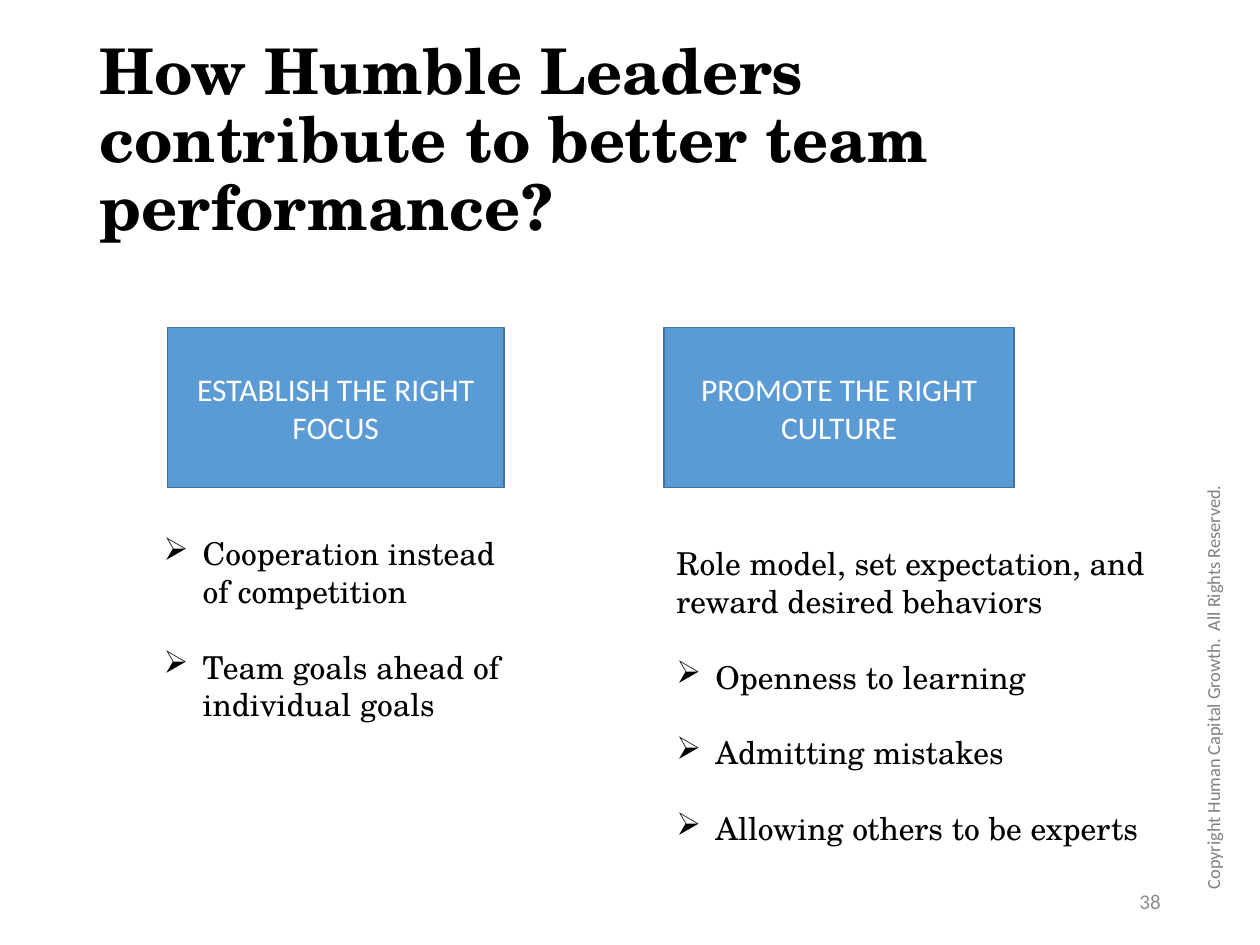
from lxml import etree
from pptx import Presentation
from pptx.dml.color import RGBColor
from pptx.enum.shapes import MSO_SHAPE
from pptx.enum.text import MSO_ANCHOR, PP_ALIGN
from pptx.oxml.ns import qn
from pptx.util import Inches, Pt

RECT = MSO_SHAPE.RECTANGLE
TOP, MIDDLE = MSO_ANCHOR.TOP, MSO_ANCHOR.MIDDLE
LEFT, CENTER, RIGHT = PP_ALIGN.LEFT, PP_ALIGN.CENTER, PP_ALIGN.RIGHT
SANS, SERIF = "Calibri", "TeX Gyre Schola"
COLORS = {"text": "000000", "fill": "5B9BD5", "line": "43739E",
          "label": "FFFFFF", "copy": "808080", "number": "8C8C8C"}


def color(name):
    """Return the named palette color."""
    return RGBColor.from_string(COLORS[name])


def add_run(par, text, font, size, shade, bold=False):
    """Add one styled run to a paragraph."""
    run = par.add_run()
    run.text = text
    run.font.name = font
    run.font.size = Pt(size)
    run.font.bold = bold
    run.font.color.rgb = color(shade)


def add_bullet(par):
    """Give a paragraph an arrow bullet with a hanging indent."""
    props = par._p.get_or_add_pPr()
    indent = Inches(0.31)
    props.set("marL", str(indent))
    props.set("indent", str(-indent))
    etree.SubElement(props, qn("a:buChar")).set("char", "➢")


def add_box(slide, area, anchor=TOP):
    """Add a wrapping text box."""
    box = slide.shapes.add_textbox(*map(Inches, area))
    box.text_frame.word_wrap = True
    box.text_frame.vertical_anchor = anchor
    return box


def add_line(slide, area, text, font, size, shade, align=LEFT, bold=False):
    """Add a middle-anchored box with a single paragraph."""
    box = add_box(slide, area, MIDDLE)
    par = box.text_frame.paragraphs[0]
    par.alignment = align
    add_run(par, text, font, size, shade, bold)
    return box


def add_panel(slide, left, width, text):
    """Add a filled heading rectangle."""
    panel = slide.shapes.add_shape(
        RECT, Inches(left), Inches(2.6), Inches(width), Inches(1.27))
    panel.shadow.inherit = False
    panel.fill.solid()
    panel.fill.fore_color.rgb = color("fill")
    panel.line.color.rgb = color("line")
    panel.line.width = Pt(1)
    panel.text_frame.word_wrap = True
    panel.text_frame.vertical_anchor = MIDDLE
    par = panel.text_frame.paragraphs[0]
    par.alignment = CENTER
    add_run(par, text, SANS, 18, "label")


def add_points(slide, area, points, intro=None):
    """Add spaced bullet points below an optional plain intro."""
    frame = add_box(slide, area).text_frame
    texts = [intro] + points if intro else points
    for index, text in enumerate(texts):
        par = frame.add_paragraph() if index else frame.paragraphs[0]
        if index:
            par.space_before = Pt(21.6)
        if text != intro:
            add_bullet(par)
        add_run(par, text, SERIF, 18, "text")


def main():
    """Build and save the slide."""
    deck = Presentation()
    deck.slide_width, deck.slide_height = Inches(10), Inches(7.5)
    slide = deck.slides.add_slide(deck.slide_layouts[6])

    notice = add_line(slide, (7.79, 5.12, 3.67, 0.4),
                      "Copyright Human Capital Growth.  All Rights Reserved.",
                      SANS, 10.5, "copy")
    notice.rotation = 270
    title = add_line(slide, (0.69, 0.4, 8.62, 1.45),
                     "How Humble Leaders contribute to better team performance?",
                     SERIF, 36, "text", bold=True)
    title.text_frame.paragraphs[0].line_spacing = 0.9
    add_line(slide, (7.06, 6.95, 2.25, 0.4), "38", SANS, 12, "number", RIGHT)

    add_panel(slide, 1.33, 2.67, "ESTABLISH THE RIGHT FOCUS")
    add_panel(slide, 5.27, 2.78, "PROMOTE THE RIGHT CULTURE")
    add_points(slide, (1.2, 4.19, 3.02, 1.62),
               ["Cooperation instead of competition",
                "Team goals ahead of individual goals"])
    add_points(slide, (5.27, 4.27, 4.04, 2.52),
               ["Openness to learning", "Admitting mistakes",
                "Allowing others to be experts"],
               "Role model, set expectation, and reward desired behaviors")
    deck.save("out.pptx")


if __name__ == "__main__":
    main()
